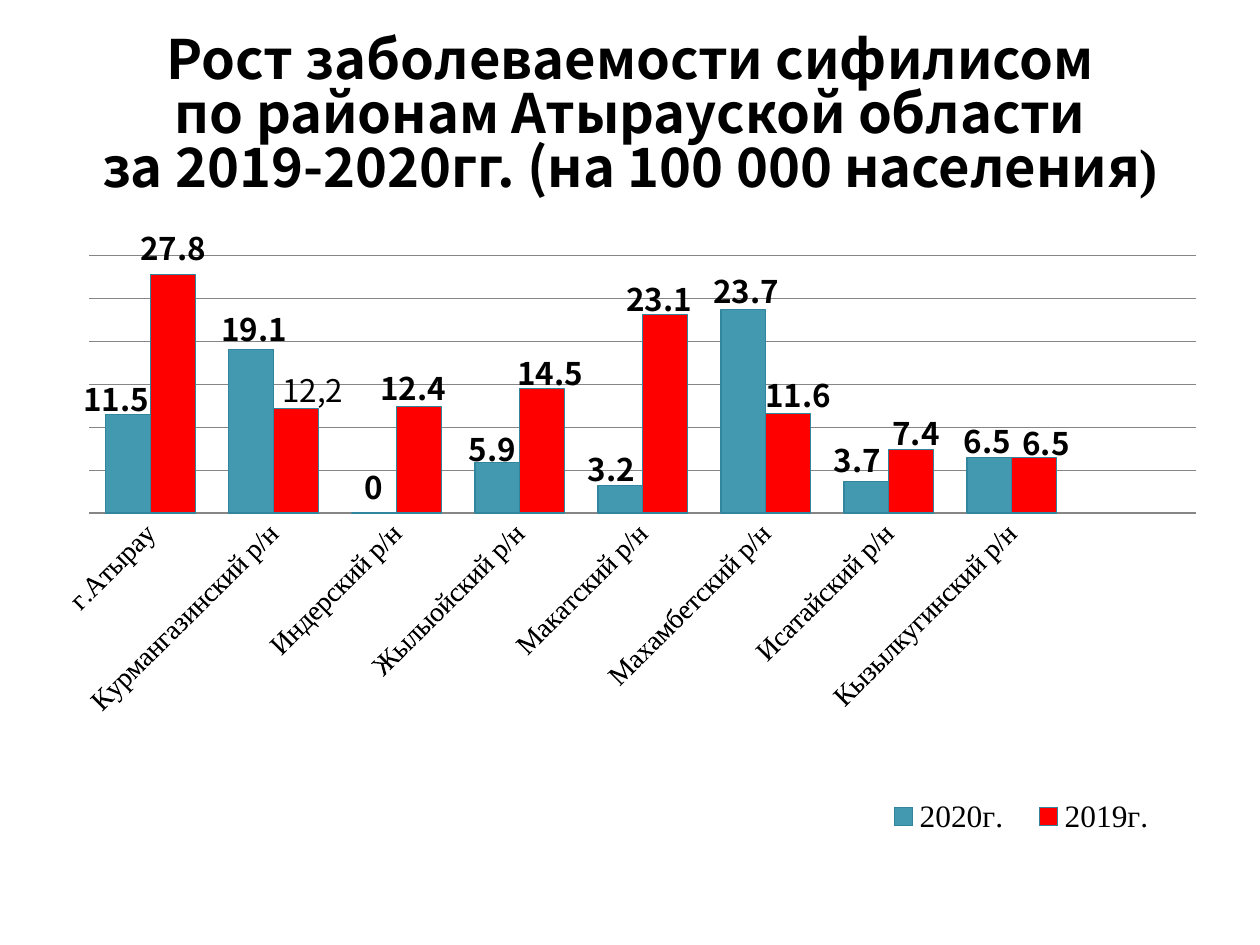
from dataclasses import dataclass

from lxml import etree
from pptx import Presentation
from pptx.chart.data import CategoryChartData
from pptx.dml.color import RGBColor
from pptx.enum.chart import XL_CHART_TYPE, XL_LABEL_POSITION, XL_LEGEND_POSITION, XL_TICK_MARK
from pptx.enum.text import MSO_ANCHOR, PP_ALIGN
from pptx.oxml.ns import qn
from pptx.util import Cm, Pt

CLUSTERED = XL_CHART_TYPE.COLUMN_CLUSTERED
OUTSIDE_END = XL_LABEL_POSITION.OUTSIDE_END
LEGEND_RIGHT = XL_LEGEND_POSITION.RIGHT
NO_TICK = XL_TICK_MARK.NONE
MIDDLE = MSO_ANCHOR.MIDDLE
CENTER = PP_ALIGN.CENTER


@dataclass(frozen=True)
class Theme:
    sans: str = "Noto Sans CJK KR"
    serif: str = "Times New Roman"
    base: str = "Calibri"
    text: str = "000000"
    grid: str = "868686"
    outline: str = "31859C"
    bars: tuple = ("4299B0", "FF0000")
    title_size: int = 31
    label_size: int = 18
    axis_size: int = 16


TITLE = ("Рост заболеваемости сифилисом\vпо районам Атырауской области\v"
         "за 2019-2020гг. (на 100 000 населения")
# The last category is an empty slot at the right end of the axis.
DISTRICTS = ["г.Атырау", "Курмангазинский р/н", "Индерский р/н", "Жылыойский р/н",
             "Макатский р/н", "Махамбетский р/н", "Исатайский р/н",
             "Кызылкугинский р/н", ""]
RATES = {
    "2020г.": [11.5, 19.1, 0, 5.9, 3.2, 23.7, 3.7, 6.5, None],
    "2019г.": [27.8, 12.2, 12.4, 14.5, 23.1, 11.6, 7.4, 6.5, None],
}
# Label shifts from the default place, in percent of the chart's width and height.
LABEL_SHIFTS = {
    "2020г.": {0: (-1.06, 1.8), 1: (0.26, 1), 3: (-0.44, 2.1), 4: (-0.8, 1.6),
               5: (0.26, 1.3), 6: (-0.8, 0.8), 7: (-0.18, 1.6)},
    "2019г.": {1: (1.5, 1.3), 2: (-0.53, 1.3), 3: (0.7, 1.8), 4: (-0.53, 1.8),
               5: (0.88, 1.3), 6: (0.44, 1.6), 7: (1.06, 1.9)},
}
PLAIN_LABELS = {("2019г.", 1): "12,2"}


def set_layout(parent, index, **values):
    """Give a chart part a manual layout, placed at the index its schema asks for."""
    for old in parent.findall(qn("c:layout")):
        parent.remove(old)
    layout = etree.Element(qn("c:layout"))
    manual = etree.SubElement(layout, qn("c:manualLayout"))
    for name, value in values.items():
        etree.SubElement(manual, qn("c:" + name)).set("val", str(value))
    parent.insert(index, layout)


class SlideBuilder:
    def __init__(self, slide, theme):
        self.slide = slide
        self.theme = theme

    def font(self, font, name, size, bold=False):
        font.name = name
        font.size = Pt(size)
        font.bold = bold
        font.color.rgb = RGBColor.from_string(self.theme.text)

    def line(self, line, color):
        line.color.rgb = RGBColor.from_string(color)
        line.width = Pt(0.75)

    def title(self, text, closing, left, top, width, height):
        """Add the heading, whose closing mark is set in the serif face."""
        tf = self.slide.shapes.add_textbox(left, top, width, height).text_frame
        tf.word_wrap = True
        tf.vertical_anchor = MIDDLE
        p = tf.paragraphs[0]
        p.text = text
        p.alignment = CENTER
        p.line_spacing = 0.83
        for r in p.runs:
            self.font(r.font, self.theme.sans, self.theme.title_size, True)
        r = p.add_run()
        r.text = closing
        self.font(r.font, self.theme.serif, self.theme.title_size, True)

    def chart(self, categories, rates, left, top, width, height):
        data = CategoryChartData()
        data.categories = categories
        for name, values in rates.items():
            data.add_series(name, values)
        chart = self.slide.shapes.add_chart(CLUSTERED, left, top, width, height, data).chart
        chart.has_title = False
        self.font(chart.font, self.theme.base, self.theme.label_size)
        plot = chart.plots[0]
        plot.gap_width = 75
        plot.overlap = 0
        plot.vary_by_categories = False
        set_layout(chart._chartSpace.chart.plotArea, 0, layoutTarget="inner",
                   xMode="edge", yMode="edge", x=0.02, y=0.04, w=0.98, h=0.42)
        self.axes(chart)
        self.legend(chart)
        for series, color in zip(plot.series, self.theme.bars):
            series.format.fill.solid()
            series.format.fill.fore_color.rgb = RGBColor.from_string(color)
            self.line(series.format.line, self.theme.outline)
            self.labels(series)

    def axes(self, chart):
        axis = chart.category_axis
        axis.major_tick_mark = axis.minor_tick_mark = NO_TICK
        self.line(axis.format.line, self.theme.grid)
        self.font(axis.tick_labels.font, self.theme.serif, self.theme.axis_size)
        axis._element.find(qn("c:txPr")).find(qn("a:bodyPr")).set("rot", "-2700000")
        axis = chart.value_axis
        axis.minimum_scale, axis.maximum_scale, axis.major_unit = 0, 30, 5
        axis.has_major_gridlines = True
        self.line(axis.major_gridlines.format.line, self.theme.grid)
        axis.visible = False

    def legend(self, chart):
        chart.has_legend = True
        legend = chart.legend
        legend.position = LEGEND_RIGHT
        legend.include_in_layout = False
        self.font(legend.font, self.theme.serif, self.theme.label_size)
        set_layout(legend._element, 1, xMode="edge", yMode="edge",
                   x=0.71, y=0.92, w=0.27, h=0.07)

    def labels(self, series):
        size = self.theme.label_size
        labels = series.data_labels
        labels.show_value = True
        labels.position = OUTSIDE_END
        self.font(labels.font, self.theme.sans, size, True)
        for i, (dx, dy) in LABEL_SHIFTS[series.name].items():
            label = series.points[i].data_label
            plain = PLAIN_LABELS.get((series.name, i))
            if plain:
                p = label.text_frame.paragraphs[0]
                r = p.add_run()
                r.text = plain
                self.font(r.font, self.theme.sans, size)
            else:
                self.font(label.font, self.theme.sans, size, True)
            label.position = OUTSIDE_END
            set_layout(label._get_or_add_dLbl(), 1,
                       x=round(dx / 100, 4), y=round(dy / 100, 4))


def main():
    prs = Presentation()
    prs.slide_width, prs.slide_height = Cm(25.4), Cm(19.05)
    builder = SlideBuilder(prs.slides.add_slide(prs.slide_layouts[6]), Theme())
    builder.title(TITLE, ")", Cm(1.27), Cm(0), Cm(22.86), Cm(4.72))
    builder.chart(DISTRICTS, RATES, Cm(1.27), Cm(4.52), Cm(22.86), Cm(12.5))
    prs.save("out.pptx")


if __name__ == "__main__":
    main()
